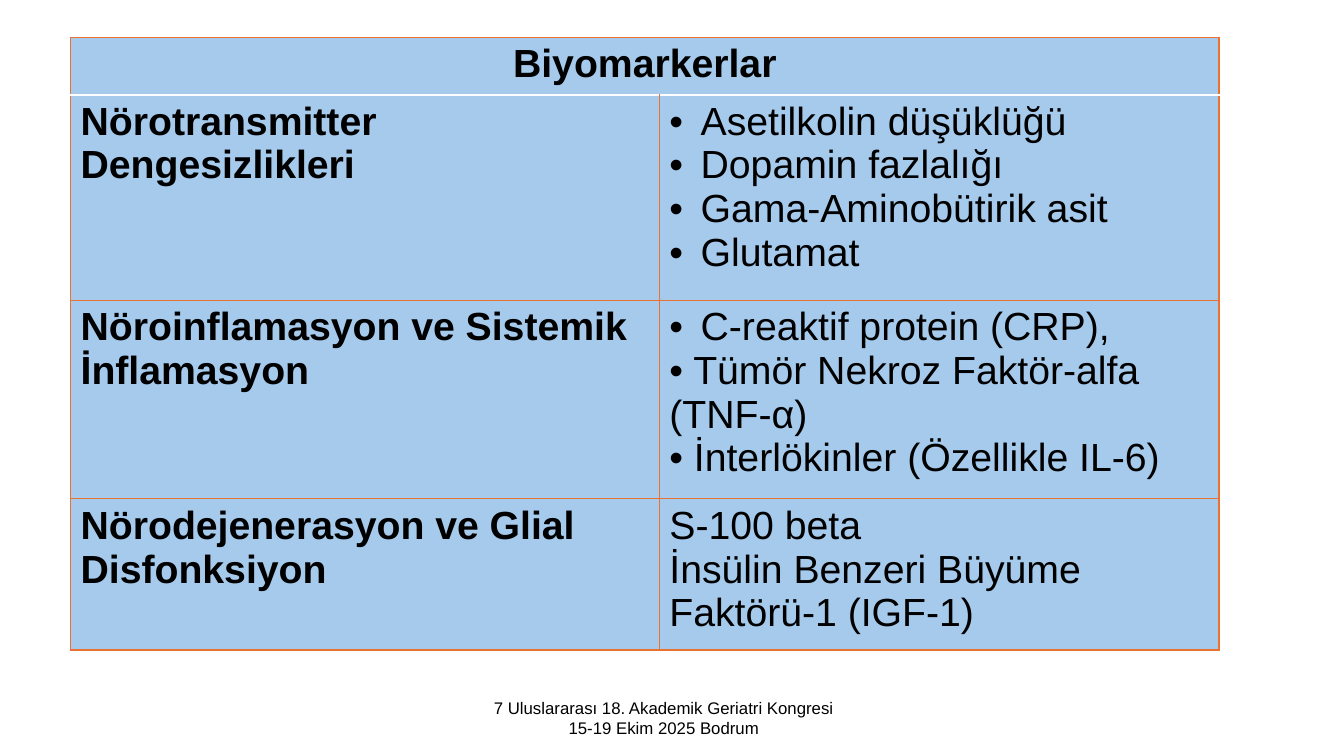
from lxml import etree
from pptx import Presentation
from pptx.dml.color import RGBColor
from pptx.enum import text
from pptx.oxml import ns
from pptx.util import Inches, Pt

BLUE = RGBColor(0xA6, 0xCA, 0xEC)
ORANGE = RGBColor(0xE9, 0x71, 0x32)
WHITE = RGBColor(0xFF, 0xFF, 0xFF)
BLACK = RGBColor(0, 0, 0)
HANG = 0.31

HEAD = "Biyomarkerlar"
ROWS = [
    ("Nörotransmitter Dengesizlikleri", [
        ("Asetilkolin düşüklüğü", HANG),
        ("Dopamin fazlalığı", HANG),
        ("Gama-Aminobütirik asit", HANG),
        ("Glutamat", HANG)]),
    ("Nöroinflamasyon ve Sistemik İnflamasyon", [
        ("C-reaktif protein (CRP),", HANG),
        (" Tümör Nekroz Faktör-alfa (TNF-α)", 0),
        (" İnterlökinler (Özellikle IL-6)", 0)]),
    ("Nörodejenerasyon ve Glial Disfonksiyon", [
        ("S-100 beta", None),
        ("İnsülin Benzeri Büyüme Faktörü-1 (IGF-1)", None)]),
]
COLS = [5.84, 5.55]
HIGH = [0.57, 2.04, 1.97, 1.5]


def style(par, size, bold=False):
    for run in par.runs:
        run.font.name = "Arial"
        run.font.size = Pt(size)
        run.font.bold = bold
        run.font.color.rgb = BLACK


def bullet(par, hang):
    props = par._p.get_or_add_pPr()
    props.set("marL", str(Inches(hang)))
    props.set("indent", str(-Inches(hang)))
    font = etree.SubElement(props, ns.qn("a:buFont"))
    font.set("typeface", "Arial")
    mark = etree.SubElement(props, ns.qn("a:buChar"))
    mark.set("char", "•")


def border(cell, edges):
    props = cell._tc.get_or_add_tcPr()
    for spot, (side, (color, width)) in enumerate(edges.items()):
        line = etree.Element(ns.qn("a:ln" + side), w=str(Pt(width)))
        fill = etree.SubElement(line, ns.qn("a:solidFill"))
        etree.SubElement(fill, ns.qn("a:srgbClr"), val=str(color))
        props.insert(spot, line)


def paint(cell, row):
    cell.fill.solid()
    cell.fill.fore_color.rgb = BLUE
    edges = dict.fromkeys("LRTB", (ORANGE, 1))
    if row < 2:
        edges["B" if row == 0 else "T"] = (WHITE, 1.5)
    border(cell, edges)


def write(cell, items, bold=False):
    frame = cell.text_frame
    frame.text = "\n".join(words for words, _ in items)
    for par, (_, hang) in zip(frame.paragraphs, items):
        if hang is not None:
            bullet(par, hang)
        style(par, 28, bold)


def grid(slide, left, top):
    frame = slide.shapes.add_table(
        len(HIGH), len(COLS), Inches(left), Inches(top),
        Inches(sum(COLS)), Inches(sum(HIGH)))
    table = frame.table
    for col, wide in zip(table.columns, COLS):
        col.width = Inches(wide)
    for index, (row, high) in enumerate(zip(table.rows, HIGH)):
        row.height = Inches(high)
        for cell in row.cells:
            paint(cell, index)
    head = table.cell(0, 0)
    head.merge(table.cell(0, 1))
    write(head, [(HEAD, None)], True)
    head.text_frame.paragraphs[0].alignment = text.PP_ALIGN.CENTER
    for index, (name, items) in enumerate(ROWS, 1):
        write(table.cell(index, 0), [(name, None)], True)
        write(table.cell(index, 1), items)


def footer(slide, left, top, wide, high):
    box = slide.shapes.add_textbox(
        Inches(left), Inches(top), Inches(wide), Inches(high))
    frame = box.text_frame
    frame.word_wrap = False
    frame.auto_size = text.MSO_AUTO_SIZE.SHAPE_TO_FIT_TEXT
    frame.text = ("7 Uluslararası 18. Akademik Geriatri Kongresi\n"
                  "15-19 Ekim 2025 Bodrum")
    for par in frame.paragraphs:
        style(par, 12)
    frame.paragraphs[1].alignment = text.PP_ALIGN.CENTER


def main():
    deck = Presentation()
    deck.slide_width = Inches(13.33)
    deck.slide_height = Inches(7.5)
    slide = deck.slides.add_slide(deck.slide_layouts[6])
    grid(slide, 0.7, 0.37)
    footer(slide, 4.8, 6.87, 3.6, 0.5)
    deck.save("out.pptx")


if __name__ == "__main__":
    main()
